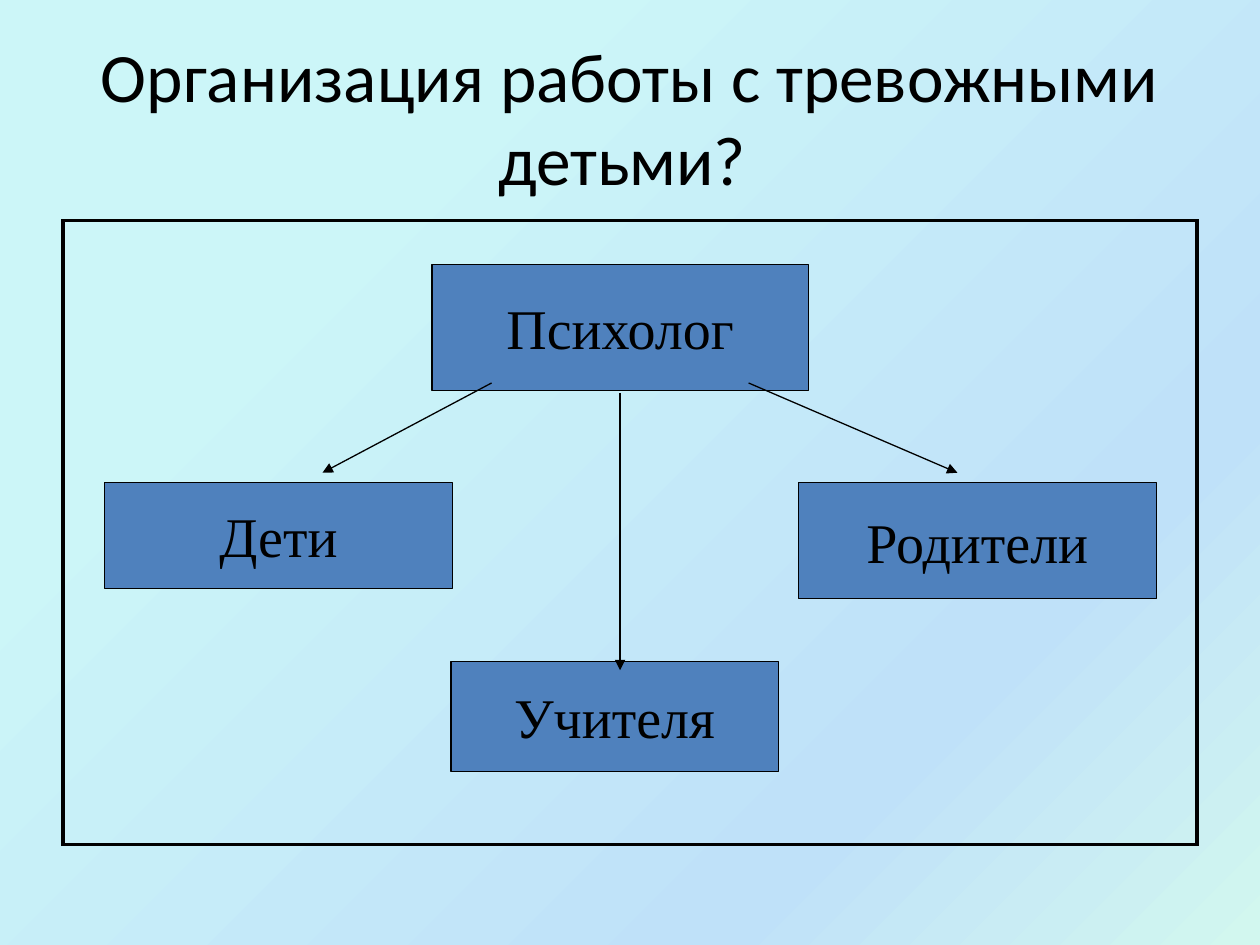
from copy import deepcopy

from lxml.etree import SubElement
from pptx import Presentation
from pptx.dml.color import RGBColor
from pptx.enum.shapes import MSO_CONNECTOR, MSO_SHAPE
from pptx.enum.text import MSO_ANCHOR, PP_ALIGN
from pptx.oxml.ns import qn
from pptx.util import Cm, Pt


def rgb(value):
    return RGBColor.from_string(value)


def write(tf, text, font="Times New Roman", size=32, color="000000", wrap=False):
    tf.word_wrap = wrap
    tf.vertical_anchor = MSO_ANCHOR.MIDDLE
    p = tf.paragraphs[0]
    p.alignment = PP_ALIGN.CENTER
    r = p.add_run()
    r.text = text
    r.font.name = font
    r.font.size = Pt(size)
    r.font.color.rgb = rgb(color)


class Diagram:
    ink = "000000"
    box_fill = "4F81BD"
    thin = 0.75
    thick = 2.25

    def __init__(self, slide):
        self.s = slide

    def background(self, stops):
        fill = self.s.background.fill
        fill.gradient()
        fill.gradient_angle = 315
        gs_list = self.s._element.xpath(".//p:bg//a:gsLst")[0]
        while len(gs_list) < len(stops):
            gs_list.append(deepcopy(gs_list[-1]))
        for stop, (position, color) in zip(fill.gradient_stops, stops):
            stop.position = position
            stop.color.rgb = rgb(color)

    def title(self, text, x, y, w, h):
        sp = self.s.shapes.title
        sp.left, sp.top, sp.width, sp.height = Cm(x), Cm(y), Cm(w), Cm(h)
        write(sp.text_frame, text, font="Calibri", size=39.6, wrap=True)

    def frame(self, x, y, w, h):
        table = self.s.shapes.add_table(1, 1, Cm(x), Cm(y), Cm(w), Cm(h)).table
        cell = table.cell(0, 0)
        tc_pr = cell._tc.get_or_add_tcPr()
        for side in ("lnL", "lnR", "lnT", "lnB"):
            ln = SubElement(tc_pr, qn(f"a:{side}"), w=str(Pt(self.thick)))
            fill = SubElement(ln, qn("a:solidFill"))
            SubElement(fill, qn("a:srgbClr"), val=self.ink)
        cell.fill.background()

    def box(self, text, x, y, w, h):
        sp = self.s.shapes.add_shape(MSO_SHAPE.RECTANGLE, Cm(x), Cm(y), Cm(w), Cm(h))
        sp.shadow.inherit = False
        sp.fill.solid()
        sp.fill.fore_color.rgb = rgb(self.box_fill)
        sp.line.color.rgb = rgb(self.ink)
        sp.line.width = Pt(self.thin)
        write(sp.text_frame, text)

    def arrow(self, x1, y1, x2, y2):
        line = self.s.shapes.add_connector(
            MSO_CONNECTOR.STRAIGHT, Cm(x1), Cm(y1), Cm(x2), Cm(y2))
        line.line.color.rgb = rgb(self.ink)
        line.line.width = Pt(self.thin)
        SubElement(line.line._get_or_add_ln(), qn("a:tailEnd"), type="triangle")
        SubElement(line._element.spPr, qn("a:effectLst"))


def main():
    prs = Presentation()
    prs.slide_width, prs.slide_height = Cm(25.4), Cm(19.05)
    d = Diagram(prs.slides.add_slide(prs.slide_layouts[5]))

    # Background, title and frame
    d.background([(0.25, "CCF6F8"), (0.75, "BFE1F9"), (1, "D2F7EF")])
    d.title("Организация работы с тревожными детьми? ", 1.27, 0.76, 22.86, 3.18)
    d.frame(1.27, 4.45, 22.86, 12.57)

    # People
    d.box("Психолог", 8.71, 5.33, 7.59, 2.54)
    d.box("Дети", 2.11, 9.73, 7.01, 2.13)
    d.box("Учителя", 9.09, 13.34, 6.6, 2.21)
    d.box("Родители", 16.1, 9.73, 7.21, 2.34)

    # Arrows from the psychologist
    d.arrow(15.09, 7.72, 19.3, 9.53)
    d.arrow(9.91, 7.72, 6.5, 9.53)
    d.arrow(12.5, 7.92, 12.5, 13.51)

    prs.save("out.pptx")


if __name__ == "__main__":
    main()
